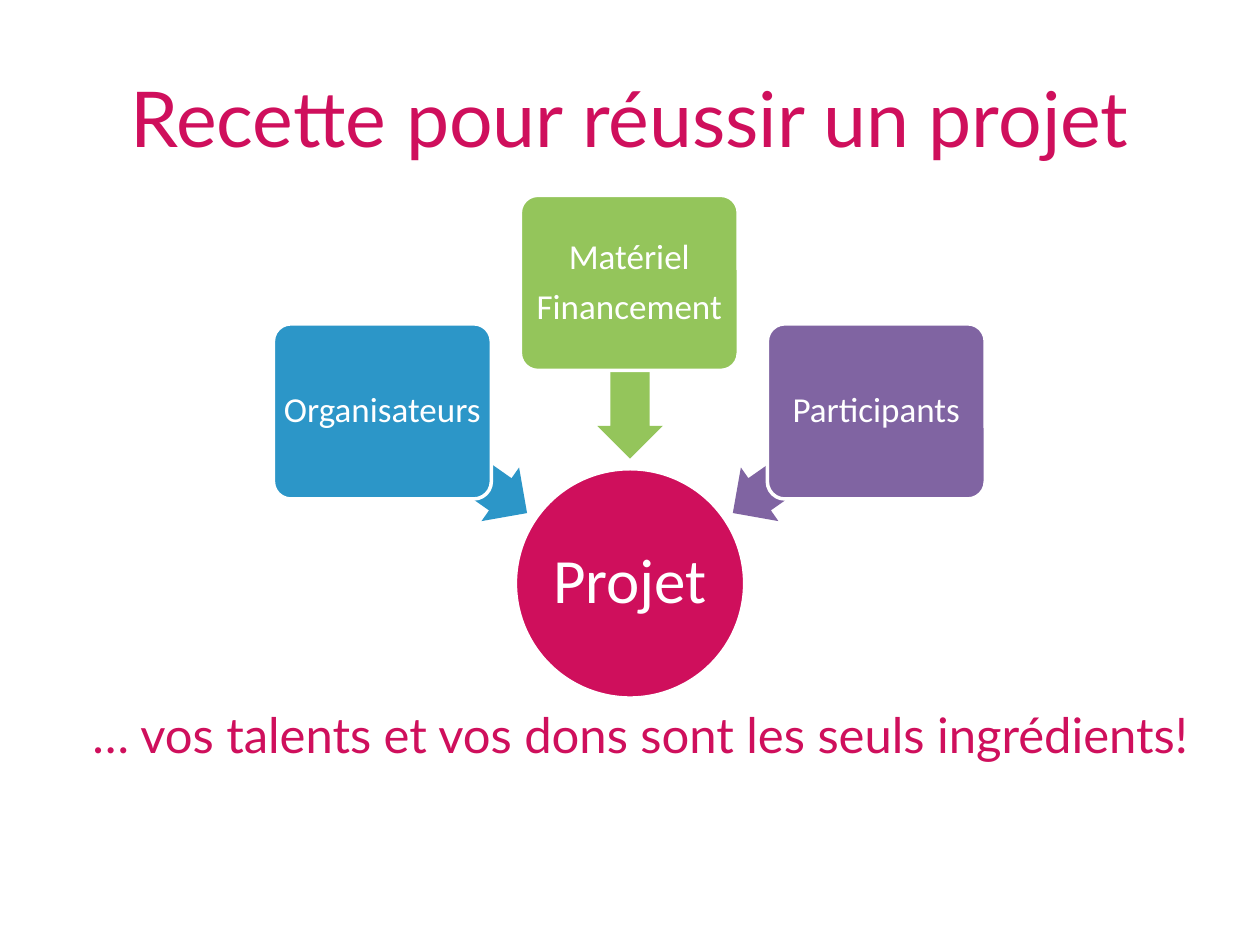
from pptx import Presentation
from pptx.dml.color import RGBColor
from pptx.enum import shapes, text
from pptx.util import Inches, Pt

COLORS = {
    "pink": "CF0F5C",
    "blue": "2C96C8",
    "green": "94C55B",
    "purple": "8064A2",
    "white": "FFFFFF",
}
BOX_WIDTH, BOX_HEIGHT = 1.73, 1.39
ARROW_WIDTH, ARROW_HEIGHT = 1.4, 0.52
CIRCLE_SIZE = 1.82
INGREDIENTS = [
    ("blue", ["Organisateurs"], (2.17, 2.57), (2.91, 3.41), 215),
    ("green", ["Matériel", "Financement"], (4.13, 1.55), (4.3, 2.68), 270),
    ("purple", ["Participants"], (6.09, 2.57), (5.69, 3.41), 325),
]


def color(name):
    return RGBColor.from_string(COLORS[name])


def place(shape, left, top, width, height):
    shape.left, shape.top = Inches(left), Inches(top)
    shape.width, shape.height = Inches(width), Inches(height)


def format_paragraph(paragraph, font_name, size, color_name, alignment):
    paragraph.alignment = alignment
    paragraph.font.name = font_name
    paragraph.font.size = Pt(size)
    paragraph.font.color.rgb = color(color_name)


def write_heading(shape, content, size, alignment):
    frame = shape.text_frame
    frame.word_wrap = True
    frame.auto_size = text.MSO_AUTO_SIZE.NONE
    frame.vertical_anchor = text.MSO_ANCHOR.MIDDLE
    frame.text = content
    format_paragraph(frame.paragraphs[0], "Lato", size, "pink", alignment)


def add_filled_shape(slide, kind, left, top, width, height, fill):
    shape = slide.shapes.add_shape(
        kind, Inches(left), Inches(top), Inches(width), Inches(height)
    )
    shape.shadow.inherit = False
    shape.fill.solid()
    shape.fill.fore_color.rgb = color(fill)
    shape.line.fill.background()
    return shape


def add_label(shape, lines, size, margin):
    shape.line.color.rgb = color("white")
    shape.line.width = Pt(2)
    frame = shape.text_frame
    frame.word_wrap = True
    frame.vertical_anchor = text.MSO_ANCHOR.MIDDLE
    frame.margin_left = frame.margin_right = Inches(margin)
    frame.margin_top = frame.margin_bottom = Inches(margin)
    frame.text = "\n".join(lines)
    for paragraph in frame.paragraphs:
        paragraph.line_spacing = 0.9
        paragraph.space_after = Pt(0.35 * size)
        format_paragraph(paragraph, "Calibri", size, "white", text.PP_ALIGN.CENTER)


def add_arrow(slide, position, rotation, fill):
    arrow = add_filled_shape(
        slide, shapes.MSO_SHAPE.LEFT_ARROW, *position, ARROW_WIDTH, ARROW_HEIGHT, fill
    )
    arrow.adjustments[0] = 0.6
    arrow.adjustments[1] = 0.5
    arrow.rotation = rotation


def add_box(slide, position, lines, fill):
    box = add_filled_shape(
        slide, shapes.MSO_SHAPE.ROUNDED_RECTANGLE, *position, BOX_WIDTH, BOX_HEIGHT, fill
    )
    box.adjustments[0] = 0.1
    add_label(box, lines, 20, 0.04)


def add_project_circle(slide):
    circle = add_filled_shape(
        slide, shapes.MSO_SHAPE.OVAL, 4.09, 3.72, CIRCLE_SIZE, CIRCLE_SIZE, "pink"
    )
    add_label(circle, ["Projet"], 36, 0.03)


def add_tagline(slide):
    tagline = slide.shapes.add_textbox(
        Inches(0.33), Inches(5.35), Inches(9.4), Inches(0.95)
    )
    tagline.text_frame.margin_right = Inches(0.3)
    write_heading(
        tagline,
        "… vos talents et vos dons sont les seuls ingrédients!",
        28,
        text.PP_ALIGN.RIGHT,
    )


def main():
    presentation = Presentation()
    presentation.slide_width = Inches(10)
    presentation.slide_height = Inches(7.5)
    slide = presentation.slides.add_slide(presentation.slide_layouts[5])

    title = slide.shapes.title
    place(title, 0.5, 0.3, 9, 1.25)
    write_heading(title, "Recette pour réussir un projet", 44, text.PP_ALIGN.CENTER)

    add_project_circle(slide)
    for fill, lines, box_position, arrow_position, rotation in INGREDIENTS:
        add_arrow(slide, arrow_position, rotation, fill)
        add_box(slide, box_position, lines, fill)
    add_tagline(slide)

    presentation.save("out.pptx")


if __name__ == "__main__":
    main()
